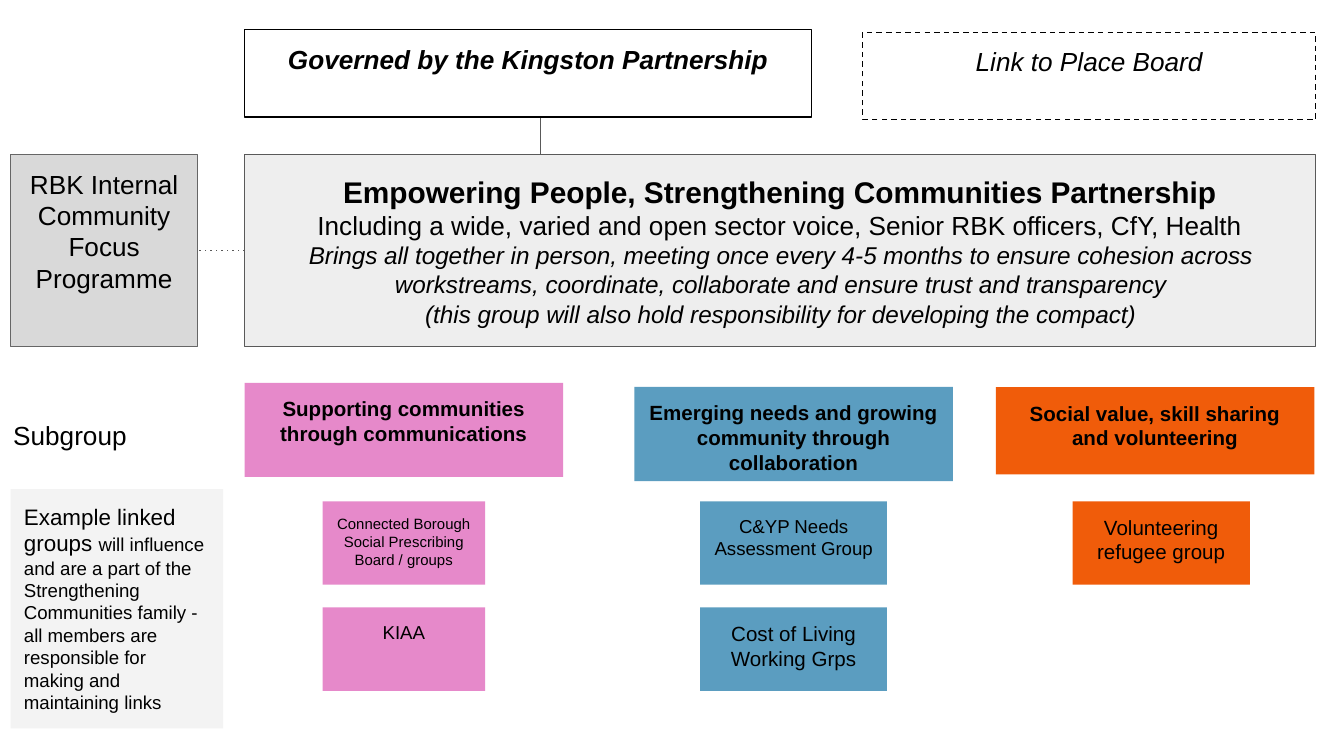
from dataclasses import dataclass

from lxml import etree
from pptx import Presentation
from pptx.dml.color import RGBColor
from pptx.enum.dml import MSO_LINE
from pptx.enum.shapes import MSO_CONNECTOR, MSO_SHAPE
from pptx.enum.text import MSO_ANCHOR, PP_ALIGN
from pptx.oxml.ns import qn
from pptx.util import Inches, Pt

RECT = MSO_SHAPE.RECTANGLE
STRAIGHT = MSO_CONNECTOR.STRAIGHT
TOP, MIDDLE = MSO_ANCHOR.TOP, MSO_ANCHOR.MIDDLE
LEFT, CENTER = PP_ALIGN.LEFT, PP_ALIGN.CENTER
DASH = MSO_LINE.DASH
LEFT_SIDE, RIGHT_SIDE = 1, 3

FONT = "Arial"
BLACK, WHITE, GREY = "000000", "FFFFFF", "595959"
PINK, BLUE, ORANGE = "E689CA", "5B9DC0", "F05C0A"
MARGIN = 0.08
MAIN_X, MAIN_RIGHT = 1.82, 9.79
BAND_Y, BAND_H = 1.15, 1.43
SUBGROUP_W = 2.37
GROUP_Y, GROUP_H, GROUP_STEP = 3.73, 0.62, 0.79


@dataclass
class Run:
    text: str
    size: float
    bold: bool = False
    italic: bool = False


@dataclass
class Box:
    x: float
    y: float
    w: float
    h: float
    paragraphs: list[list[Run]]
    fill: str | None = None
    line: str | None = None
    dash: MSO_LINE | None = None
    align: PP_ALIGN = CENTER
    anchor: MSO_ANCHOR = TOP


@dataclass
class Subgroup:
    x: float
    y: float
    h: float
    color: str
    title: str
    group_x: float
    group_w: float
    groups: list[Run]


def rgb(value: str) -> RGBColor:
    return RGBColor.from_string(value)


def add_runs(p, runs: list[Run]) -> None:
    for run in runs:
        for i, part in enumerate(run.text.split("\n")):
            if i:
                p.add_line_break()
            r = p.add_run()
            r.text = part
            r.font.name, r.font.size = FONT, Pt(run.size)
            r.font.bold, r.font.italic = run.bold, run.italic
            r.font.color.rgb = rgb(BLACK)


def draw_box(s, box: Box):
    frame = [Inches(v) for v in (box.x, box.y, box.w, box.h)]
    if box.fill:
        sp = s.shapes.add_shape(RECT, *frame)
        sp.shadow.inherit = False
        sp.fill.solid()
        sp.fill.fore_color.rgb = rgb(box.fill)
        if box.line:
            sp.line.color.rgb = rgb(box.line)
            sp.line.width = Pt(0.75)
            if box.dash:
                sp.line.dash_style = box.dash
        else:
            sp.line.fill.background()
    else:
        sp = s.shapes.add_textbox(*frame)
    tf = sp.text_frame
    tf.word_wrap = True
    tf.vertical_anchor = box.anchor
    tf.margin_left = tf.margin_right = tf.margin_top = tf.margin_bottom = Inches(0.1)
    for i, runs in enumerate(box.paragraphs):
        p = tf.add_paragraph() if i else tf.paragraphs[0]
        p.alignment = box.align
        add_runs(p, runs)
    return sp


def draw_line(s, x1: float, y1: float, x2: float, y2: float, dotted: bool = False):
    line = s.shapes.add_connector(STRAIGHT, Inches(x1), Inches(y1), Inches(x2), Inches(y2))
    line.line.color.rgb = rgb(GREY)
    line.line.width = Pt(0.75)
    spPr = line._element.spPr
    if dotted:
        etree.SubElement(spPr.find(qn("a:ln")), qn("a:prstDash"), val="dot")
    etree.SubElement(spPr, qn("a:effectLst"))
    return line


def draw_subgroup(s, sub: Subgroup) -> None:
    title = [[Run(sub.title, 11, bold=True)]]
    draw_box(s, Box(sub.x, sub.y, SUBGROUP_W, sub.h, title, sub.color))
    for i, run in enumerate(sub.groups):
        y = GROUP_Y + i * GROUP_STEP
        draw_box(s, Box(sub.group_x, y, sub.group_w, GROUP_H, [[run]], sub.color))


GOVERNANCE = [
    Box(MAIN_X, 0.22, 4.22, 0.65,
        [[Run("Governed by the Kingston Partnership", 14, bold=True, italic=True)]],
        WHITE, BLACK),
    Box(6.42, 0.24, MAIN_RIGHT - 6.42, 0.65,
        [[Run("Link to Place Board", 14, italic=True)]], WHITE, BLACK, DASH),
]
PARTNERSHIP = Box(MAIN_X, BAND_Y, MAIN_RIGHT - MAIN_X, BAND_H, [
    [Run("Empowering People, Strengthening Communities Partnership", 16, bold=True)],
    [Run("Including a wide, varied and open sector voice, Senior RBK officers, CfY, Health", 14)],
    [Run("Brings all together in person, meeting once every 4-5 months to ensure cohesion "
         "across workstreams, coordinate, collaborate and ensure trust and transparency\n"
         "(this group will also hold responsibility for developing the compact)",
         13, italic=True)],
], "EEEEEE", GREY, anchor=MIDDLE)
PROGRAMME = Box(MARGIN, BAND_Y, 1.39, BAND_H,
                [[Run("RBK Internal Community Focus Programme", 14)]], "D9D9D9", "666666")
ROW_LABELS = [
    Box(0, 3.02, 1.13, 0.44, [[Run("Subgroup", 14)]], align=LEFT),
    Box(MARGIN, 3.64, 1.58, 1.78, [[
        Run("Example linked groups ", 12),
        Run("will influence and are a part of the Strengthening Communities family - "
            "all members are responsible for making and maintaining links", 10),
    ]], "F3F3F3", align=LEFT),
]
SUBGROUPS = [
    Subgroup(MAIN_X, 2.85, 0.7, PINK, "Supporting communities through communications",
             2.4, 1.21, [Run("Connected Borough Social Prescribing Board / groups", 8),
                         Run("KIAA", 10)]),
    Subgroup(4.72, 2.88, 0.7, BLUE,
             "Emerging needs and growing community through collaboration",
             5.21, 1.39, [Run("C&YP Needs Assessment Group", 10),
                          Run("Cost of Living Working Grps", 11)]),
    Subgroup(7.41, 2.88, 0.65, ORANGE, "Social value, skill sharing and volunteering",
             7.98, 1.32, [Run("Volunteering refugee group", 11)]),
]


def main() -> None:
    prs = Presentation()
    prs.slide_width = Inches(10)
    prs.slide_height = prs.slide_width * 9 // 16
    s = prs.slides.add_slide(prs.slide_layouts[6])

    # Governance line, then the boxes over its ends
    draw_line(s, 4.02, 1.24, 4.02, 0.77)
    for box in GOVERNANCE:
        draw_box(s, box)

    # Partnership and the internal programme linked to it
    partnership = draw_box(s, PARTNERSHIP)
    programme = draw_box(s, PROGRAMME)
    mid_y = BAND_Y + BAND_H / 2
    link = draw_line(s, MAIN_X, mid_y, PROGRAMME.x + PROGRAMME.w, mid_y, dotted=True)
    link.begin_connect(partnership, LEFT_SIDE)
    link.end_connect(programme, RIGHT_SIDE)

    # Subgroups with their example linked groups
    for box in ROW_LABELS:
        draw_box(s, box)
    for sub in SUBGROUPS:
        draw_subgroup(s, sub)

    prs.save("out.pptx")


if __name__ == "__main__":
    main()
